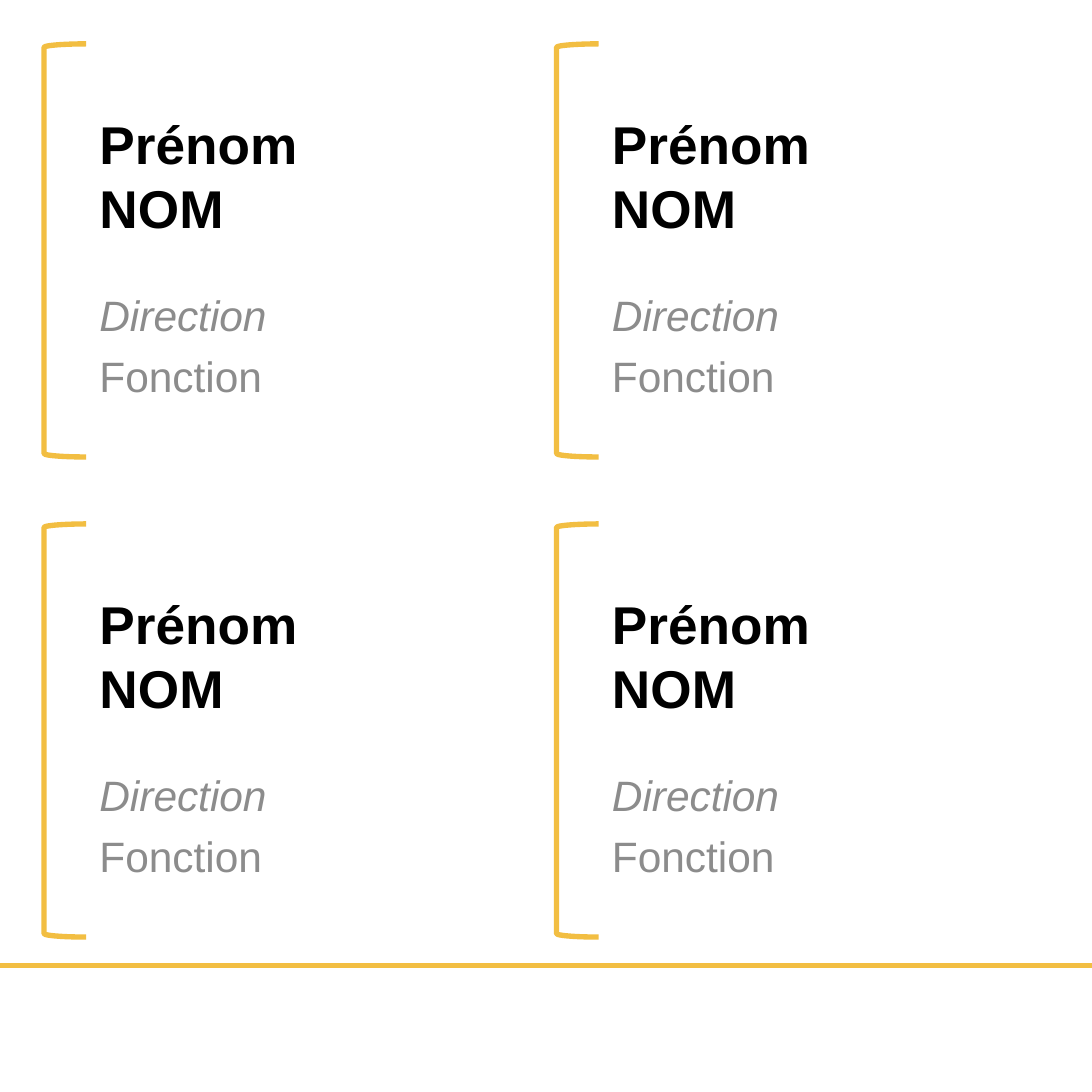
from copy import deepcopy

from pptx import Presentation
from pptx.dml.color import RGBColor
from pptx.enum.shapes import MSO_CONNECTOR, MSO_SHAPE
from pptx.enum.text import MSO_ANCHOR, MSO_AUTO_SIZE, PP_ALIGN
from pptx.oxml.ns import qn
from pptx.oxml.xmlchemy import OxmlElement
from pptx.util import Inches, Pt

STRAIGHT = MSO_CONNECTOR.STRAIGHT
LEFT_BRACKET = MSO_SHAPE.LEFT_BRACKET
TOP, MIDDLE = MSO_ANCHOR.TOP, MSO_ANCHOR.MIDDLE
NO_AUTOFIT = MSO_AUTO_SIZE.NONE
ALIGN_LEFT = PP_ALIGN.LEFT

COLORS = {"gold": "F2BE42", "name": "000000", "detail": "8C8C8C"}
FORMATS = {
    "name": {"size": Pt(20), "bold": True, "italic": False},
    "direction": {"size": Pt(16), "bold": False, "italic": True},
    "function": {"size": Pt(16), "bold": False, "italic": False},
}
FRAME = {
    "word_wrap": True,
    "auto_size": NO_AUTOFIT,
    "margin_left": Inches(0.07),
    "margin_right": Inches(0.07),
    "margin_top": Inches(0.03),
    "margin_bottom": Inches(0.03),
}
NAME = [("Prénom\vNOM", "name", "name")]
DETAILS = [("Direction", "direction", "detail"), ("Fonction", "function", "detail")]

SLIDE_SIZE = 5.71
COLUMN_PITCH, ROW_PITCH = 2.68, 2.51
BADGE_LEFT, BADGE_TOP = 0.23, 0.23


class BadgeSheet:
    """Draws name badges on one slide in a shared style."""

    def __init__(self, slide, font_name="Arial", line_width=2):
        self.slide = slide
        self.font_name = font_name
        self.line_width = Pt(line_width)

    def style_line(self, line):
        line.color.rgb = RGBColor.from_string(COLORS["gold"])
        line.width = self.line_width

    def text(self, box, lines, anchor, placeholder=None):
        left, top, width, height = map(Inches, box)
        if placeholder is None:
            shape = self.slide.shapes.add_textbox(left, top, width, height)
        else:
            shape = placeholder
            shape.left, shape.top, shape.width, shape.height = left, top, width, height
        frame = shape.text_frame
        for attribute, value in FRAME.items():
            setattr(frame, attribute, value)
        frame.vertical_anchor = anchor
        for index, (content, style, color) in enumerate(lines):
            paragraph = frame.add_paragraph() if index else frame.paragraphs[0]
            paragraph.text = content
            paragraph.alignment = ALIGN_LEFT
            paragraph.space_before = Pt(4 if index else 0)
            for run in paragraph.runs:
                run.font.name = self.font_name
                run.font.color.rgb = RGBColor.from_string(COLORS[color])
                for attribute, value in FORMATS[style].items():
                    setattr(run.font, attribute, value)
            for line_break in paragraph._p.findall(qn("a:br")):
                line_break.insert(0, deepcopy(paragraph.runs[0]._r.rPr))

    def bracket(self, left, top, width, height):
        shape = self.slide.shapes.add_shape(
            LEFT_BRACKET, Inches(left), Inches(top), Inches(width), Inches(height)
        )
        shape.shadow.inherit = False
        shape.fill.background()
        self.style_line(shape.line)

    def rule(self, top):
        connector = self.slide.shapes.add_connector(
            STRAIGHT, 0, Inches(top), Inches(SLIDE_SIZE), Inches(top)
        )
        self.style_line(connector.line)
        connector._element.spPr.append(OxmlElement("a:effectLst"))

    def badge(self, left, top, title=None, subtitle=None):
        text_left = left + 0.22
        self.text((text_left, top + 0.13, 2.41, 1.11), NAME, MIDDLE, title)
        self.text((text_left, top + 1.25, 2.41, 0.91), DETAILS, TOP, subtitle)
        self.bracket(left, top, 0.22, 2.16)


def main():
    presentation = Presentation()
    presentation.slide_width = presentation.slide_height = Inches(SLIDE_SIZE)
    slide = presentation.slides.add_slide(presentation.slide_layouts[0])
    title, subtitle = slide.placeholders
    sheet = BadgeSheet(slide)
    sheet.rule(5.05)
    for row in range(2):
        for column in range(2):
            placeholders = () if row or column else (title, subtitle)
            sheet.badge(
                BADGE_LEFT + column * COLUMN_PITCH,
                BADGE_TOP + row * ROW_PITCH,
                *placeholders,
            )
    presentation.save("out.pptx")


if __name__ == "__main__":
    main()
